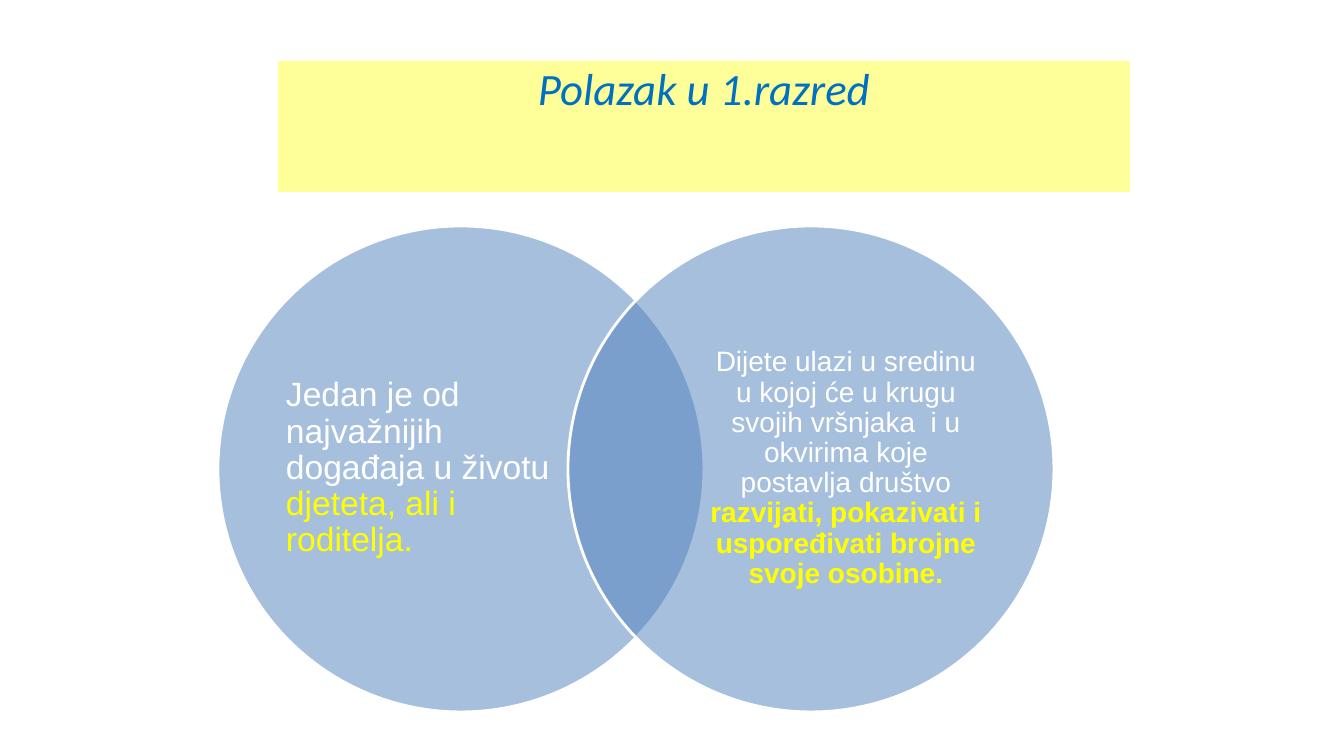
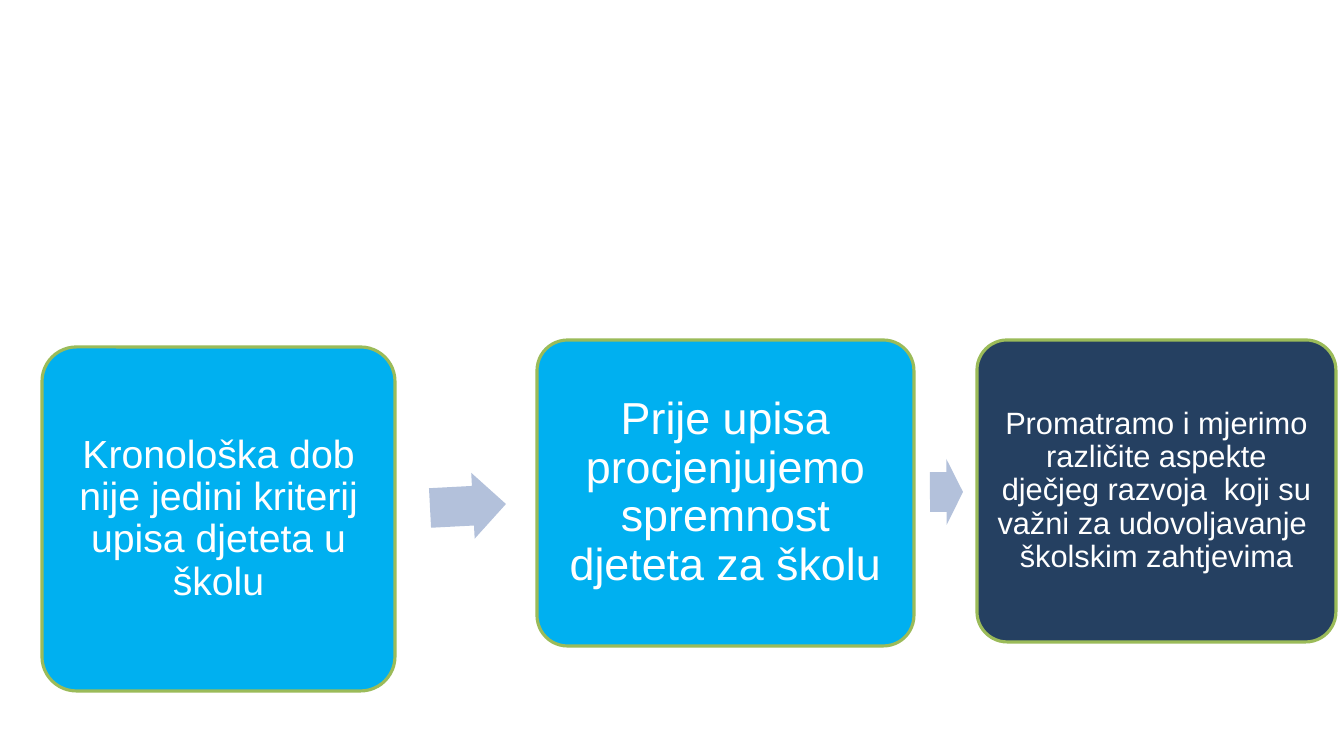
from collections import namedtuple

from lxml import etree
from pptx import Presentation
from pptx import util as u
from pptx.dml.color import RGBColor
from pptx.enum import shapes, text
from pptx.oxml import ns

PX = 914400 / 100.8
COLORS = {
    "banner": "FFFF99",
    "title": "0070C0",
    "circle": "4F81BD",
    "white": "FFFFFF",
    "accent": "FFFF00",
    "step": "00B0F0",
    "final_step": "254061",
    "step_line": "9BBB59",
    "arrow": "B3C1DB",
}
SHAPE = shapes.MSO_SHAPE
ALIGN = text.PP_ALIGN
Box = namedtuple("Box", "left top width height")
Span = namedtuple("Span", "words color bold", defaults=("white", False))


def px(value):
    return u.Emu(round(value * PX))


def place(box):
    return [px(value) for value in box]


def color(name):
    return RGBColor.from_string(COLORS[name])


def paint(shape, fill, line=None, width=0):
    shape.shadow.inherit = False
    shape.fill.solid()
    shape.fill.fore_color.rgb = color(fill)
    if line:
        shape.line.color.rgb = color(line)
        shape.line.width = u.Pt(width)
    else:
        shape.line.fill.background()


def set_frame(frame, anchor, inset=0):
    frame.word_wrap = True
    frame.auto_size = text.MSO_AUTO_SIZE.NONE
    frame.vertical_anchor = anchor
    frame.margin_left = frame.margin_right = px(inset)
    frame.margin_top = frame.margin_bottom = px(inset)


def write(frame, spans, size, align=ALIGN.CENTER, inset=0):
    set_frame(frame, text.MSO_ANCHOR.MIDDLE, inset)
    para = frame.paragraphs[0]
    para.alignment = align
    para.line_spacing = 0.9
    for span in spans:
        run = para.add_run()
        run.text = span.words
        run.font.name = "Arial"
        run.font.size = u.Pt(size)
        run.font.bold = span.bold
        run.font.color.rgb = color(span.color)


def add_title(page, box, words):
    title = page.shapes.title
    title.left, title.top, title.width, title.height = place(box)
    title.fill.solid()
    title.fill.fore_color.rgb = color("banner")
    frame = title.text_frame
    frame.text = words
    set_frame(frame, text.MSO_ANCHOR.TOP)
    para = frame.paragraphs[0]
    para.alignment = ALIGN.CENTER
    font = para.runs[0].font
    font.name = "Calibri"
    font.size = u.Pt(32)
    font.italic = True
    font.color.rgb = color("title")


def add_circle(page, box, text_indent, spans, size, align):
    circle = page.shapes.add_shape(SHAPE.OVAL, *place(box))
    paint(circle, "circle", "white", 2)
    fill_color = circle.fill._xPr.find(".//" + ns.qn("a:srgbClr"))
    etree.SubElement(fill_color, ns.qn("a:alpha"), val="50000")
    text_box = Box(box.left + text_indent, box.top + 57, 280, box.height - 115)
    label = page.shapes.add_textbox(*place(text_box))
    write(label.text_frame, spans, size, align)


def add_venn(page, box):
    size = box.height
    left = Box(box.left, box.top, size, size)
    right = left._replace(left=box.left + box.width - size)
    add_circle(page, left, 68, [
        Span("Jedan je od najvažnijih događaja u životu "),
        Span("djeteta, ali i roditelja.", "accent"),
    ], 24, ALIGN.LEFT)
    add_circle(page, right, 138, [
        Span("Dijete ulazi u sredinu u kojoj će u krugu svojih vršnjaka  i u "
             "okvirima koje postavlja društvo "),
        Span("razvijati, pokazivati i uspoređivati brojne svoje osobine.",
             "accent", True),
    ], 20, ALIGN.CENTER)


def add_step(page, box, words, size, inset, fill="step"):
    step = page.shapes.add_shape(SHAPE.ROUNDED_RECTANGLE, *place(box))
    step.adjustments[0] = 0.1
    paint(step, fill, "step_line", 2.25)
    write(step.text_frame, [Span(words)], size, inset=inset)


def add_arrow(page, box, rotation):
    arrow = page.shapes.add_shape(SHAPE.RIGHT_ARROW, *place(box))
    arrow.adjustments[0] = 0.6
    arrow.adjustments[1] = 0.5
    arrow.rotation = rotation
    paint(arrow, "arrow")


def add_process(page, box):
    def inside(left, top, width, height):
        return Box(box.left + left, box.top + top, width, height)

    add_step(page, inside(0, 7, 353, 344),
             "Kronološka dob nije jedini kriterij upisa djeteta u školu", 28, 12)
    add_arrow(page, inside(388, 133, 76, 66), 357)
    add_step(page, inside(495, 0, 377, 306),
             "Prije upisa procjenjujemo spremnost djeteta za školu", 32, 13)
    add_arrow(page, inside(888, 119, 33, 66), 359.8)
    add_step(page, inside(935, 0, 359, 302),
             "Promatramo i mjerimo različite aspekte dječjeg razvoja  koji su "
             "važni za udovoljavanje  školskim zahtjevima", 22, 9, "final_step")


def build_first_grade(deck):
    page = deck.slides.add_slide(deck.slide_layouts.get_by_name("Title Only"))
    add_title(page, Box(278, 61, 852, 131), "Polazak u 1.razred")
    add_venn(page, Box(218, 226, 836, 486))


def build_readiness(deck):
    page = deck.slides.add_slide(deck.slide_layouts.get_by_name("Blank"))
    add_process(page, Box(42, 340, 1294, 351))


def main():
    deck = Presentation()
    deck.slide_width = px(1344)
    deck.slide_height = px(756)
    build_first_grade(deck)
    build_readiness(deck)
    deck.save("out.pptx")


if __name__ == "__main__":
    main()
